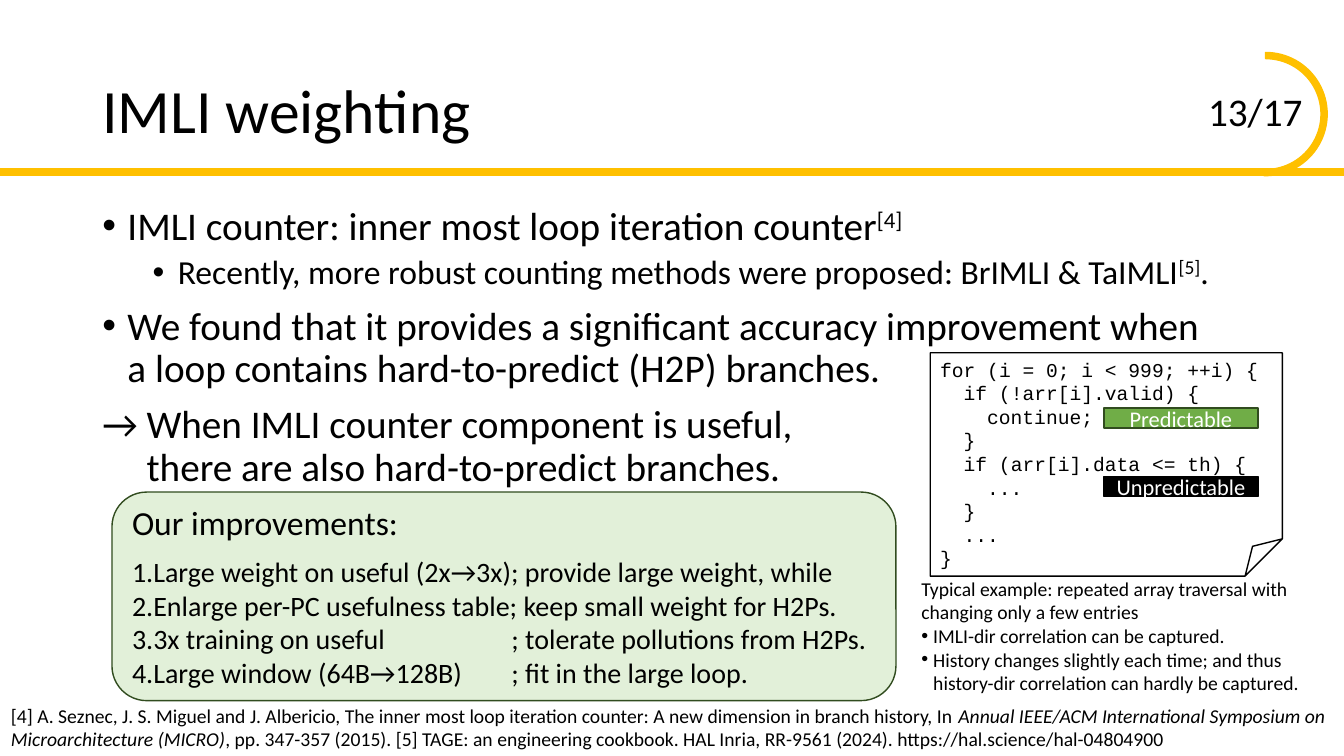
from lxml import etree
from pptx import Presentation
from pptx.dml.color import RGBColor
from pptx.enum.shapes import MSO_CONNECTOR, MSO_SHAPE
from pptx.enum.text import MSO_ANCHOR, PP_ALIGN
from pptx.oxml.ns import qn
from pptx.util import Pt

BLACK = RGBColor(0x00, 0x00, 0x00)
WHITE = RGBColor(0xFF, 0xFF, 0xFF)
GOLD = RGBColor(0xFF, 0xC0, 0x00)
GREEN = RGBColor(0x70, 0xAD, 0x47)
PALE_GREEN = RGBColor(0xE2, 0xF0, 0xD9)
DARK_GREEN = RGBColor(0x31, 0x4C, 0x1F)

STRAIGHT = MSO_CONNECTOR.STRAIGHT
ARC = MSO_SHAPE.BLOCK_ARC
FOLDED = MSO_SHAPE.FOLDED_CORNER
ROUNDED = MSO_SHAPE.ROUNDED_RECTANGLE
RECTANGLE = MSO_SHAPE.RECTANGLE
TOP, MIDDLE = MSO_ANCHOR.TOP, MSO_ANCHOR.MIDDLE
LEFT, CENTER, RIGHT = PP_ALIGN.LEFT, PP_ALIGN.CENTER, PP_ALIGN.RIGHT


class SlideBuilder:
    font = "Calibri"
    code_font = "Courier New"

    def __init__(self, slide):
        self.slide = slide

    def rule(self, x1, y1, x2, y2, color, weight):
        rule = self.slide.shapes.add_connector(STRAIGHT, Pt(x1), Pt(y1), Pt(x2), Pt(y2))
        rule.line.color.rgb = color
        rule.line.width = Pt(weight)
        etree.SubElement(rule._element.spPr, qn("a:effectLst"))

    def shape(self, kind, box, fill, outline):
        shape = self.slide.shapes.add_shape(kind, *map(Pt, box))
        shape.shadow.inherit = False
        if fill is None:
            shape.fill.background()
        else:
            shape.fill.solid()
            shape.fill.fore_color.rgb = fill
        shape.line.color.rgb = outline
        shape.line.width = Pt(1)
        return shape

    def frame(self, shape, anchor=TOP, bottom=3.6, top=3.6):
        frame = shape.text_frame
        frame.word_wrap = True
        frame.vertical_anchor = anchor
        frame.margin_top, frame.margin_bottom = Pt(top), Pt(bottom)
        return frame

    def text_box(self, box, anchor=TOP):
        return self.frame(self.slide.shapes.add_textbox(*map(Pt, box)), anchor)

    def paragraph(self, frame, runs, size, color=BLACK, font=None, align=LEFT,
                  spacing=1.0, before=0, margin=0, hanging=0, bullet=None, tab=None):
        first = frame.paragraphs[0]
        paragraph = frame.add_paragraph() if first.runs else first
        paragraph.alignment = align
        paragraph.line_spacing = spacing
        paragraph.space_before = Pt(before)
        properties = paragraph._p.get_or_add_pPr()
        properties.set("marL", str(Pt(margin)))
        properties.set("indent", str(-Pt(hanging)))
        if bullet == "number":
            etree.SubElement(properties, qn("a:buAutoNum"), type="arabicPeriod")
        elif bullet:
            etree.SubElement(properties, qn("a:buFont"), typeface="Arial")
            etree.SubElement(properties, qn("a:buChar"), char=bullet)
        if tab:
            stops = etree.SubElement(properties, qn("a:tabLst"))
            etree.SubElement(stops, qn("a:tab"), pos=str(Pt(tab)), algn="l")
        for text, style in runs:
            for index, line in enumerate(text.split("\n")):
                if index:
                    paragraph.add_line_break()
                run = paragraph.add_run()
                run.text = line
                run.font.name = font or self.font
                run.font.size = Pt(size)
                run.font.color.rgb = color
                run.font.italic = style == "italic"
                if style == "super":
                    run.font._element.set("baseline", "30000")

    def label(self, box, text, fill, outline):
        frame = self.frame(self.shape(RECTANGLE, box, fill, outline), MIDDLE)
        self.paragraph(frame, [(text, None)], 16, WHITE, align=CENTER)

    def code(self, box, lines):
        frame = self.frame(self.shape(FOLDED, box, None, BLACK))
        for depth, line in lines:
            self.paragraph(frame, [(line, None)], 14, font=self.code_font, margin=16.8 * depth)


def main():
    deck = Presentation()
    deck.slide_width, deck.slide_height = Pt(960), Pt(540)
    page = SlideBuilder(deck.slides.add_slide(deck.slide_layouts[6]))

    number = page.text_box((721.5, 59, 216, 29))
    page.paragraph(number, [("13/17", None)], 28, align=RIGHT)
    page.rule(0, 123, 960, 123, GOLD, 6)
    arc = page.shape(ARC, (860, 37.5, 88, 88), GOLD, GOLD)
    arc.rotation = 90
    for index, value in enumerate((108, 0.94, 0.05)):
        arc.adjustments[index] = value

    title = page.text_box((66, 29, 828, 104.5), MIDDLE)
    page.paragraph(title, [("IMLI weighting", None)], 44, spacing=0.9)

    body = page.text_box((66, 144, 828, 342.5))
    points = [
        ([("IMLI counter: inner most loop iteration counter", None), ("[4]", "super")],
         28, 10, 18, 18, "•"),
        ([("Recently, more robust counting methods were proposed: BrIMLI & TaIMLI", None),
          ("[5]", "super"), (".", None)], 24, 5, 54, 18, "•"),
        ([("We found that it provides a significant accuracy improvement when\n"
           "a loop contains hard-to-predict (H2P) branches.", None)], 28, 10, 18, 18, "•"),
        ([("→ When IMLI counter component is useful,\n"
           "there are also hard-to-predict branches.", None)], 28, 10, 31.7, 31.7, None),
    ]
    for runs, size, before, margin, hanging, bullet in points:
        page.paragraph(body, runs, size, spacing=0.9, before=before,
                       margin=margin, hanging=hanging, bullet=bullet)

    page.code((664.5, 252, 251.5, 159.5), [
        (0, "for (i = 0; i < 999; ++i) {"),
        (1, "if (!arr[i].valid) {"),
        (2, "continue;"),
        (1, "}"),
        (1, "if (arr[i].data <= th) {"),
        (2, "..."),
        (1, "}"),
        (1, "..."),
        (0, "}"),
    ])

    example = page.text_box((651, 408.5, 286.5, 92))
    page.paragraph(example, [("Typical example: repeated array traversal with "
                              "changing only a few entries", None)], 14)
    for finding in ("IMLI-dir correlation can be captured.",
                    "History changes slightly each time; and thus\n"
                    "history-dir correlation can hardly be captured."):
        page.paragraph(example, [(finding, None)], 14, margin=8.5, hanging=8.5, bullet="•")

    panel = page.shape(ROUNDED, (80, 351.5, 560, 149), PALE_GREEN, DARK_GREEN)
    improvements = page.frame(panel, top=0)
    page.paragraph(improvements, [("Our improvements:", None)], 24)
    for index, improvement in enumerate((
            "Large weight on useful (2x→3x); provide large weight, while",
            "Enlarge per-PC usefulness table; keep small weight for H2Ps.",
            "3x training on useful\t; tolerate pollutions from H2Ps.",
            "Large window (64B→128B)\t; fit in the large loop.")):
        page.paragraph(improvements, [(improvement, None)], 20, before=0 if index else 8.5,
                       margin=14.4, hanging=14.4, bullet="number", tab=271)

    page.label((788.5, 291.5, 110, 14.4), "Predictable", GREEN, DARK_GREEN)
    page.label((788.5, 340.5, 110, 14.4), "Unpredictable", BLACK, BLACK)

    references = page.text_box((0.7, 499, 960, 41))
    page.paragraph(references, [
        ("[4] A. Seznec, J. S. Miguel and J. Albericio, The inner most loop iteration counter: "
         "A new dimension in branch history, In ", None),
        ("Annual IEEE/ACM International Symposium on Microarchitecture (MICRO)", "italic"),
        (", pp. 347-357 (2015). [5] TAGE: an engineering cookbook. HAL Inria, RR-9561 (2024). "
         "https://hal.science/hal-04804900", None),
    ], 14)

    deck.save("out.pptx")


if __name__ == "__main__":
    main()
